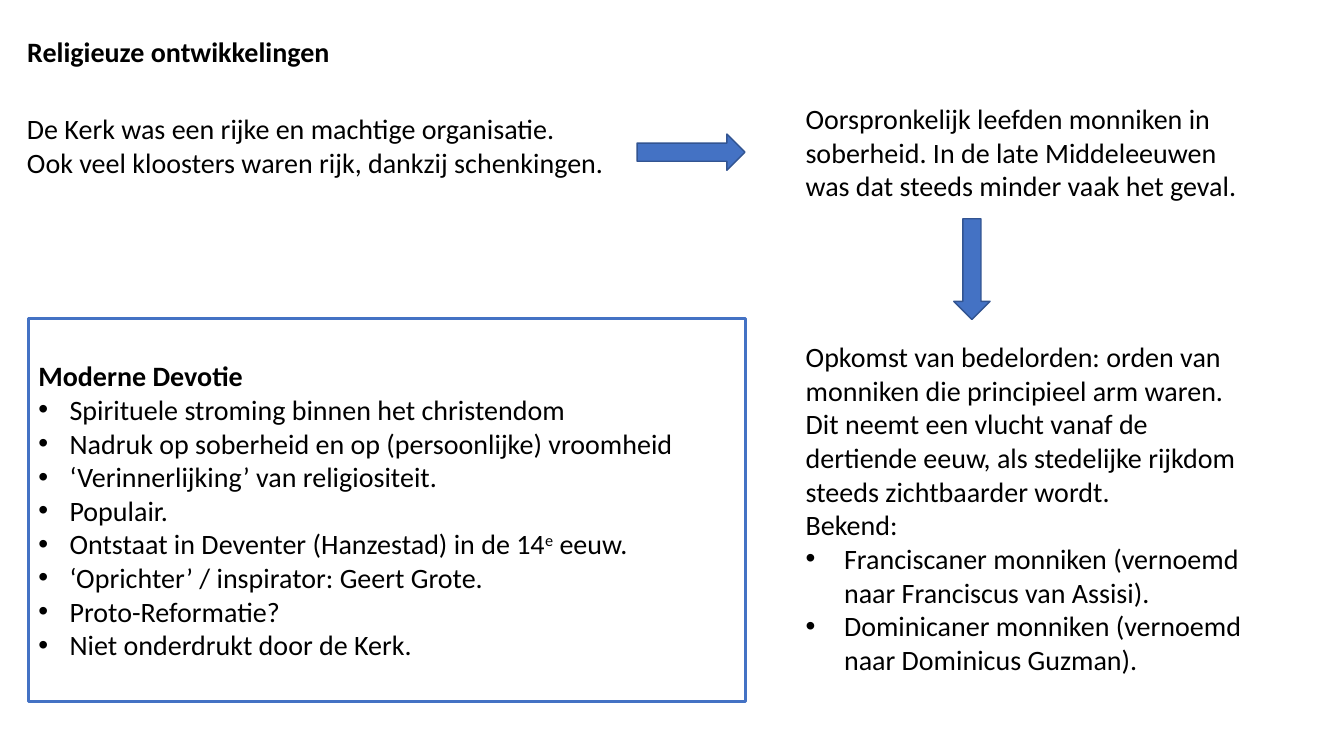
from dataclasses import dataclass

from lxml.etree import SubElement
from pptx import Presentation
from pptx.dml.color import RGBColor
from pptx.enum.shapes import MSO_SHAPE as Shape
from pptx.enum.text import MSO_ANCHOR as Anchor, MSO_AUTO_SIZE as AutoSize, PP_ALIGN as Align
from pptx.oxml.ns import qn
from pptx.util import Inches, Pt


@dataclass(frozen=True)
class Theme:
    font: str = "Calibri"
    size: Pt = Pt(20)
    ink: RGBColor = RGBColor(0, 0, 0)
    accent: RGBColor = RGBColor(0x44, 0x72, 0xC4)
    arrow_edge: RGBColor = RGBColor(0x32, 0x54, 0x91)


theme = Theme()
deck = Presentation()
deck.slide_width, deck.slide_height = Inches(13.33), Inches(7.5)
TWO_CONTENT = 3
slide = deck.slides.add_slide(deck.slide_layouts[TWO_CONTENT])


def area(left, top, width, height):
    """Turn percentages of the slide's width and height into lengths."""
    column, row = deck.slide_width / 100, deck.slide_height / 100
    return int(left * column), int(top * row), int(width * column), int(height * row)


def write(holder, lines, box=None, bold_first=False, indent=0, plain=1, anchor=Anchor.TOP):
    """Fill holder with lines, bulleted after the first `plain`; ^ encloses superscript."""
    if box:
        holder.left, holder.top, holder.width, holder.height = area(*box)
    frame = holder.text_frame
    frame.word_wrap = True
    frame.auto_size = AutoSize.NONE
    frame.vertical_anchor = anchor
    for number, line in enumerate(lines):
        paragraph = frame.add_paragraph() if number else frame.paragraphs[0]
        bulleted = number >= plain
        hang = Inches(indent) if bulleted else 0
        properties = paragraph._p.get_or_add_pPr()
        properties.set("marL", str(hang))
        properties.set("indent", str(-hang))
        if bulleted:
            SubElement(properties, qn("a:buFont"), typeface="Arial")
            SubElement(properties, qn("a:buChar"), char="•")
        else:
            SubElement(properties, qn("a:buNone"))
        paragraph.alignment = Align.LEFT
        paragraph.space_before = Pt(0)
        for part, words in enumerate(line.split("^")):
            run = paragraph.add_run()
            run.text = words
            run.font.name, run.font.size = theme.font, theme.size
            run.font.color.rgb = theme.ink
            run.font.bold = bold_first and number == 0
            if part % 2:
                run._r.get_or_add_rPr().set("baseline", "30000")


LEFT, RIGHT = 1.27, 59.2
title, devotion, orders = slide.placeholders

write(title, ["Religieuze ontwikkelingen"], box=(LEFT, 3.87, 41.4, 5.87), bold_first=True)

statements = [
    ((LEFT, 14.13, 44.55, 10.27),
     "De Kerk was een rijke en machtige organisatie. "
     "Ook veel kloosters waren rijk, dankzij schenkingen."),
    ((RIGHT, 12.8, 33.83, 14.8),
     "Oorspronkelijk leefden monniken in soberheid. "
     "In de late Middeleeuwen was dat steeds minder vaak het geval."),
]
for box, statement in statements:
    write(slide.shapes.add_textbox(*area(*box)), [statement])

write(orders, [
    "Opkomst van bedelorden: orden van monniken die principieel arm waren. "
    "Dit neemt een vlucht vanaf de dertiende eeuw, als stedelijke rijkdom "
    "steeds zichtbaarder wordt.",
    "Bekend:",
    "Franciscaner monniken (vernoemd naar Franciscus van Assisi).",
    "Dominicaner monniken (vernoemd naar Dominicus Guzman).",
], box=(RIGHT, 44.27, 35.1, 46.27), indent=0.38, plain=2)

write(devotion, [
    "Moderne Devotie",
    "Spirituele stroming binnen het christendom",
    "Nadruk op soberheid en op (persoonlijke) vroomheid",
    "‘Verinnerlijking’ van religiositeit.",
    "Populair.",
    "Ontstaat in Deventer (Hanzestad) in de 14^e^ eeuw.",
    "‘Oprichter’ / inspirator: Geert Grote.",
    "Proto-Reformatie?",
    "Niet onderdrukt door de Kerk.",
], box=(2.1, 42.13, 53.4, 50.67), bold_first=True, indent=0.31, anchor=Anchor.MIDDLE)
devotion.line.color.rgb = theme.accent
devotion.line.width = Pt(2.25)

arrows = [
    (Shape.RIGHT_ARROW, (47.4, 17.73, 8.03, 4.8)),
    (Shape.DOWN_ARROW, (70.97, 28.93, 2.7, 13.33)),
]
for direction, box in arrows:
    arrow = slide.shapes.add_shape(direction, *area(*box))
    arrow.shadow.inherit = False
    arrow.fill.solid()
    arrow.fill.fore_color.rgb = theme.accent
    arrow.line.color.rgb = theme.arrow_edge
    arrow.line.width = Pt(1)

deck.save("out.pptx")
